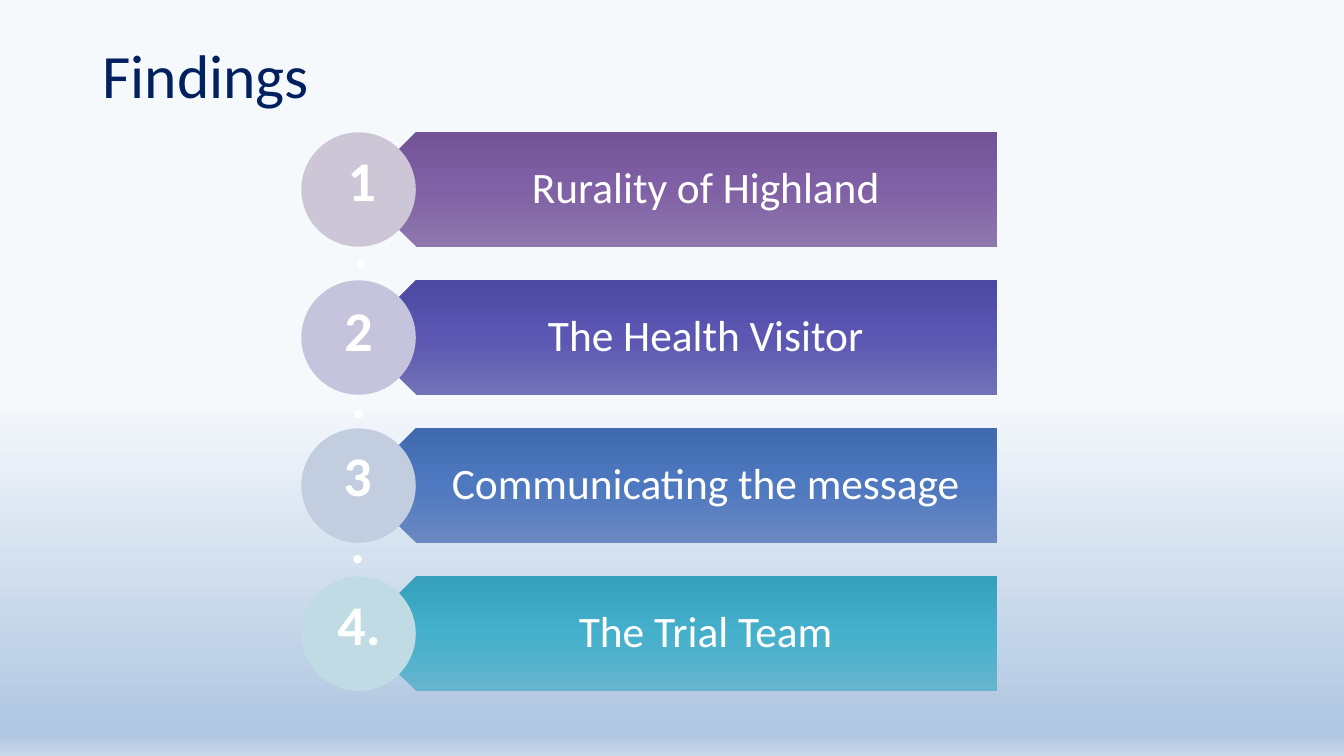
import pptx
import pptx.util
import pptx.dml.color
import pptx.enum.shapes
import pptx.enum.text
import pptx.oxml
import pptx.oxml.ns

PX = 9525  # EMU per px, 96 px to the inch
SHAPE = pptx.enum.shapes.MSO_SHAPE
ALIGN = pptx.enum.text.PP_ALIGN
ANCHOR = pptx.enum.text.MSO_ANCHOR
SIZE = pptx.enum.text.MSO_AUTO_SIZE


def px(n):
    return pptx.util.Emu(n * PX)


def color(code):
    return pptx.dml.color.RGBColor.from_string(code)


class Deck:
    font = "Calibri"
    navy = "002060"
    white = "FFFFFF"

    def __init__(self):
        self.file = pptx.Presentation()
        self.file.slide_width, self.file.slide_height = px(1280), px(720)
        self.slide = self.file.slides.add_slide(self.file.slide_layouts[5])

    def blend(self, fill, node, stops):
        """Fill from top to bottom with (percent, colour) stops."""
        fill.gradient()
        fill.gradient_angle = 270
        tag = pptx.oxml.ns.qn("a:gsLst")
        group = next(node.iter(tag))
        for old in list(group):
            group.remove(old)
        space = pptx.oxml.ns.nsdecls("a")
        for place, code in stops:
            group.append(pptx.oxml.parse_xml(
                f'<a:gs {space} pos="{place * 1000}">'
                f'<a:srgbClr val="{code}"/></a:gs>'))

    def back(self, stops):
        self.blend(self.slide.background.fill, self.slide.element, stops)

    def words(self, frame, text, size, code, align, bold=False, lead=None):
        frame.word_wrap = True
        para = frame.paragraphs[0]
        para.alignment = align
        para.line_spacing = lead
        run = para.add_run()
        run.text = text
        run.font.name, run.font.size = self.font, pptx.util.Pt(size)
        run.font.bold, run.font.color.rgb = bold, color(code)

    def title(self, text, x, y, w, h):
        box = self.slide.shapes.title
        box.left, box.top, box.width, box.height = map(px, (x, y, w, h))
        frame = box.text_frame
        frame.auto_size = SIZE.NONE
        frame.vertical_anchor = ANCHOR.TOP
        self.words(frame, text, 44, self.navy, ALIGN.LEFT, lead=0.9)

    def shape(self, kind, x, y, w, h):
        item = self.slide.shapes.add_shape(kind, *map(px, (x, y, w, h)))
        item.shadow.inherit = False
        item.line.fill.background()
        return item

    def arrow(self, x, y, w, h, stops):
        item = self.shape(SHAPE.PENTAGON, x, y, w, h)
        item.rotation = 180
        self.blend(item.fill, item.element, stops)

    def disc(self, x, y, d, code):
        item = self.shape(SHAPE.OVAL, x, y, d, d)
        item.fill.solid()
        item.fill.fore_color.rgb = color(code)

    def label(self, text, x, y, w, h):
        frame = self.slide.shapes.add_textbox(
            *map(px, (x, y, w, h))).text_frame
        frame.vertical_anchor = ANCHOR.MIDDLE
        frame.margin_left, frame.margin_right = px(48), px(23)
        frame.margin_top = frame.margin_bottom = px(12)
        self.words(frame, text, 31, self.white, ALIGN.CENTER, lead=0.9)

    def number(self, text, x, y, w, h):
        frame = self.slide.shapes.add_textbox(
            *map(px, (x, y, w, h))).text_frame
        self.words(frame, text, 40, self.white, ALIGN.CENTER, bold=True)
        frame.auto_size = SIZE.SHAPE_TO_FIT_TEXT


# Label, bar colours from top to bottom, disc colour, number box (x, y, w)
ROWS = [
    ("Rurality of Highland", ("8E78AC", "8061A5", "715396"), "CDC6D7",
     (315, 134, 59)),
    ("The Health Visitor", ("7371B7", "5B57B2", "4C49A3"), "C5C4DC",
     (312, 277, 59)),
    ("Communicating the message", ("6B89C2", "4E78BF", "3F6AB0"), "C3CDE0",
     (311, 415, 59)),
    ("The Trial Team", ("66B5CD", "45B0CC", "36A0BC"), "C1DBE5",
     (307, 557, 70)),
]
TOP, STEP, HIGH = 126, 141, 109


def main():
    deck = Deck()

    # Background and title
    deck.back([(52, "F6F9FC"), (97, "B0C6E1"), (100, "CAD9EB")])
    deck.title("Findings", 88, 38, 937, 139)

    # Bars with their labels and discs
    for i, (text, shades, pale, spot) in enumerate(ROWS):
        y = TOP + i * STEP
        deck.arrow(342, y, 608, HIGH, zip((0, 50, 100), shades))
        deck.label(text, 369, y, 581, HIGH)
        deck.disc(287, y, HIGH, pale)

    # Numbers on the discs
    for i, (text, shades, pale, (x, y, w)) in enumerate(ROWS, 1):
        deck.number(f"{i}.", x, y, w, 74)

    deck.file.save("out.pptx")


if __name__ == "__main__":
    main()
